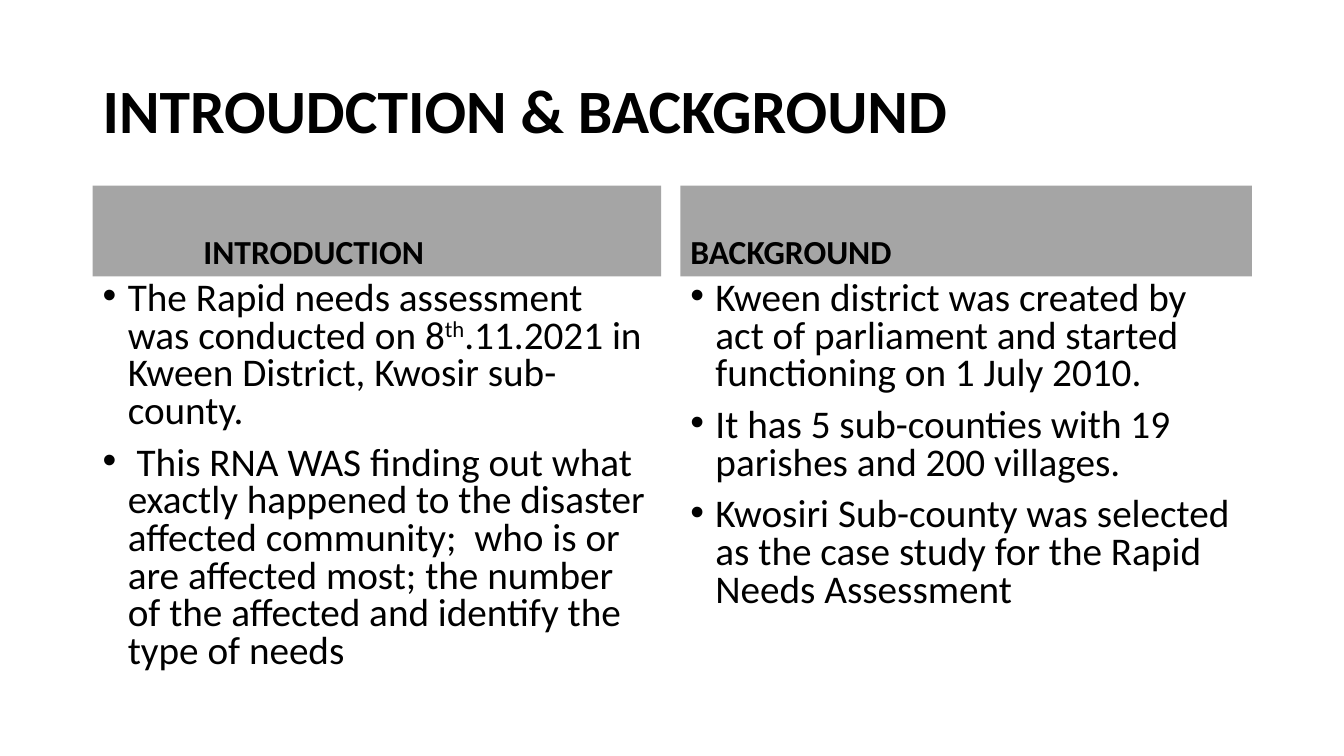
"""Build the introduction and background slide with two headed bullet columns."""
from dataclasses import dataclass

from lxml.etree import SubElement
from pptx import Presentation
from pptx.dml.color import RGBColor
from pptx.enum.shapes import MSO_SHAPE
from pptx.enum.text import MSO_ANCHOR, PP_ALIGN
from pptx.oxml.ns import qn
from pptx.shapes.autoshape import Shape
from pptx.slide import Slide
from pptx.util import Pt

BLACK = RGBColor(0x00, 0x00, 0x00)
GRAY = RGBColor(0xA5, 0xA5, 0xA5)
FONT = "Calibri"
LEFT = 66.24
HEADING_TOP, HEADING_HEIGHT = 132.6, 64.8
BODY_TOP = HEADING_TOP + HEADING_HEIGHT
BODY_HEIGHT = 290.16
BULLET_INDENT = 18


@dataclass(frozen=True)
class Piece:
    text: str
    superscript: bool = False


@dataclass(frozen=True)
class Column:
    left: float
    width: float
    heading: str
    heading_indent: float
    bullets: tuple[tuple[Piece, ...], ...]


COLUMNS = (
    Column(LEFT, 406.08, "INTRODUCTION", 72, (
        (
            Piece("The Rapid needs assessment was conducted on 8"),
            Piece("th", superscript=True),
            Piece(".11.2021 in Kween District, Kwosir sub-county."),
        ),
        (Piece(" This RNA WAS finding out what exactly happened to the disaster "
               "affected community;  who is or are affected most; the number of "
               "the affected and identify the type of needs"),),
    )),
    Column(486, 408.24, "BACKGROUND", 0, (
        (Piece("Kween district was created by act of parliament and started "
               "functioning on 1 July 2010."),),
        (Piece("It has 5 sub-counties with 19 parishes and 200 villages."),),
        (Piece("Kwosiri Sub-county was selected as the case study for the Rapid "
               "Needs Assessment"),),
    )),
)


def write_paragraphs(shape: Shape, paragraphs: tuple[tuple[Piece, ...], ...],
                     size: float, anchor: MSO_ANCHOR, line_spacing: float,
                     space_before: float = 0, bold: bool = False,
                     indent: float = 0, bulleted: bool = False) -> None:
    """Write paragraphs into a shape, run by run."""
    frame = shape.text_frame
    frame.word_wrap = True
    frame.vertical_anchor = anchor
    for index, pieces in enumerate(paragraphs):
        paragraph = frame.add_paragraph() if index else frame.paragraphs[0]
        paragraph.alignment = PP_ALIGN.LEFT
        paragraph.line_spacing = line_spacing
        paragraph.space_before = Pt(space_before)
        properties = paragraph._p.get_or_add_pPr()
        properties.set("marL", str(Pt(indent)))
        if bulleted:
            properties.set("indent", str(-Pt(indent)))
            SubElement(properties, qn("a:buFont")).set("typeface", "Arial")
            SubElement(properties, qn("a:buChar")).set("char", "•")
        for piece in pieces:
            run = paragraph.add_run()
            run.text = piece.text
            run.font.name = FONT
            run.font.size = Pt(size)
            run.font.bold = bold
            run.font.color.rgb = BLACK
            if piece.superscript:
                run._r.get_or_add_rPr().set("baseline", "30000")


def add_title(slide: Slide, text: str) -> None:
    """Add the slide title."""
    title = slide.shapes.add_textbox(Pt(LEFT), Pt(28.8), Pt(828), Pt(104.4))
    write_paragraphs(title, ((Piece(text),),), 44, MSO_ANCHOR.MIDDLE, 0.9, bold=True)


def add_column(slide: Slide, column: Column) -> None:
    """Add a column heading band with its bullet list below."""
    band = slide.shapes.add_shape(MSO_SHAPE.RECTANGLE, Pt(column.left), Pt(HEADING_TOP),
                                  Pt(column.width), Pt(HEADING_HEIGHT))
    band.shadow.inherit = False
    band.fill.solid()
    band.fill.fore_color.rgb = GRAY
    band.line.fill.background()
    write_paragraphs(band, ((Piece(column.heading),),), 24, MSO_ANCHOR.BOTTOM, 0.9,
                     space_before=10, bold=True, indent=column.heading_indent)
    body = slide.shapes.add_textbox(Pt(column.left), Pt(BODY_TOP),
                                    Pt(column.width), Pt(BODY_HEIGHT))
    write_paragraphs(body, column.bullets, 28, MSO_ANCHOR.TOP, 0.8,
                     space_before=10, indent=BULLET_INDENT, bulleted=True)


def main() -> None:
    """Create and save the presentation."""
    presentation = Presentation()
    presentation.slide_width = Pt(960)
    presentation.slide_height = Pt(540)
    slide = presentation.slides.add_slide(presentation.slide_layouts[6])
    add_title(slide, "INTROUDCTION & BACKGROUND")
    for column in COLUMNS:
        add_column(slide, column)
    presentation.save("out.pptx")


if __name__ == "__main__":
    main()
